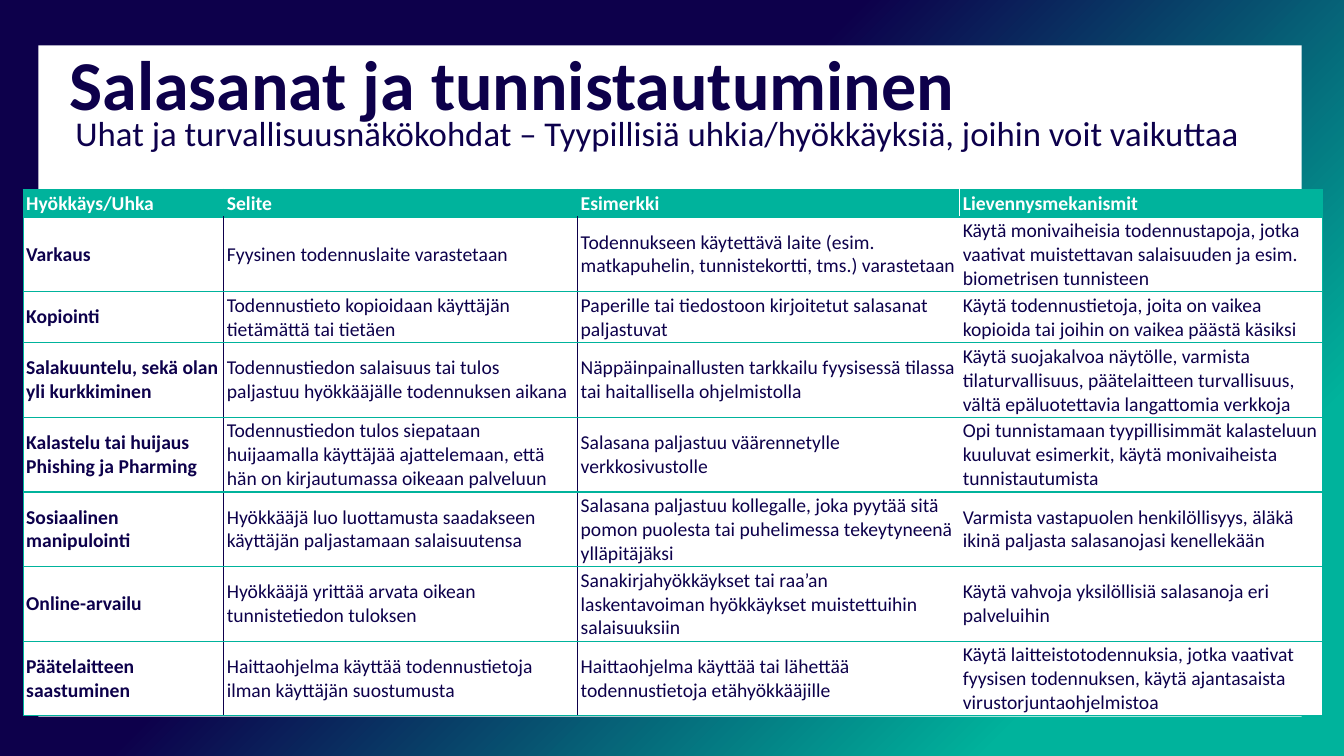
from lxml import etree
from pptx import Presentation
from pptx.dml.color import RGBColor
from pptx.enum.shapes import MSO_SHAPE
from pptx.enum.text import MSO_ANCHOR, MSO_AUTO_SIZE, PP_ALIGN
from pptx.oxml import parse_xml
from pptx.util import Inches, Pt

RECTANGLE = MSO_SHAPE.RECTANGLE
MIDDLE, TOP = MSO_ANCHOR.MIDDLE, MSO_ANCHOR.TOP
NO_AUTOFIT = MSO_AUTO_SIZE.NONE
LEFT = PP_ALIGN.LEFT
A = "http://schemas.openxmlformats.org/drawingml/2006/main"
NAVY, GREEN, WHITE = "0D004B", "00B39C", "FFFFFF"


def paint(color_format, color):
    color_format.rgb = RGBColor.from_string(color)


def write(tf, text, size, color, bold, anchor):
    tf.text = text
    tf.word_wrap = True
    tf.vertical_anchor = anchor
    p = tf.paragraphs[0]
    p.alignment = LEFT
    for r in p.runs:
        r.font.name = "Calibri"
        r.font.size = Pt(size)
        r.font.bold = bold
        paint(r.font.color, color)
    return p


prs = Presentation()
prs.slide_width, prs.slide_height = Inches(13.33), Inches(7.5)
slide = prs.slides.add_slide(prs.slide_layouts[5])

fill = slide.background.fill
fill.gradient()
fill.gradient_angle = 315
stops = fill._fill._gradFill.find(f"{{{A}}}gsLst")
for stop in list(stops):
    stops.remove(stop)
for share, color in [(0, NAVY), (41, NAVY), (83, GREEN), (99, GREEN)]:
    stop = etree.SubElement(stops, f"{{{A}}}gs", pos=str(share * 1000))
    etree.SubElement(stop, f"{{{A}}}srgbClr", val=color)

panel = slide.shapes.add_shape(RECTANGLE, Inches(0.38), Inches(0.45), Inches(12.53), Inches(6.66))
panel.shadow.inherit = False
panel.fill.solid()
paint(panel.fill.fore_color, WHITE)
panel.line.fill.background()

title = slide.shapes.title
title.left, title.top, title.width, title.height = (Inches(v) for v in (0.59, 0.42, 11.5, 0.9))
p = write(title.text_frame, "Salasanat ja tunnistautuminen", 50, NAVY, True, MIDDLE)
p.line_spacing = 0.9
title.text_frame.auto_size = NO_AUTOFIT
title._element.addprevious(panel._element)

subtitle = slide.shapes.add_textbox(Inches(0.65), Inches(1.17), Inches(11.88), Inches(0.71))
p = write(subtitle.text_frame,
          "Uhat ja turvallisuusnäkökohdat – Tyypillisiä uhkia/hyökkäyksiä, joihin voit vaikuttaa",
          24.8, "0D004C", False, TOP)
p.line_spacing = 0.7

rows = [
    ("Hyökkäys/Uhka", "Selite", "Esimerkki", "Lievennysmekanismit"),
    ("Varkaus",
     "Fyysinen todennuslaite varastetaan",
     "Todennukseen käytettävä laite (esim. matkapuhelin, tunnistekortti, tms.) varastetaan",
     "Käytä monivaiheisia todennustapoja, jotka vaativat muistettavan salaisuuden ja esim. biometrisen tunnisteen"),
    ("Kopiointi",
     "Todennustieto kopioidaan käyttäjän tietämättä tai tietäen",
     "Paperille tai tiedostoon kirjoitetut salasanat paljastuvat",
     "Käytä todennustietoja, joita on vaikea kopioida tai joihin on vaikea päästä käsiksi"),
    ("Salakuuntelu, sekä olan yli kurkkiminen",
     "Todennustiedon salaisuus tai tulos paljastuu hyökkääjälle todennuksen aikana",
     "Näppäinpainallusten tarkkailu fyysisessä tilassa tai haitallisella ohjelmistolla",
     "Käytä suojakalvoa näytölle, varmista tilaturvallisuus, päätelaitteen turvallisuus, "
     "vältä epäluotettavia langattomia verkkoja"),
    ("Kalastelu tai huijaus\vPhishing ja Pharming",
     "Todennustiedon tulos siepataan huijaamalla käyttäjää ajattelemaan, "
     "että hän on kirjautumassa oikeaan palveluun",
     "Salasana paljastuu väärennetylle verkkosivustolle",
     "Opi tunnistamaan tyypillisimmät kalasteluun kuuluvat esimerkit, käytä monivaiheista tunnistautumista"),
    ("Sosiaalinen manipulointi",
     "Hyökkääjä luo luottamusta saadakseen käyttäjän paljastamaan salaisuutensa",
     "Salasana paljastuu kollegalle, joka pyytää sitä pomon puolesta "
     "tai puhelimessa tekeytyneenä ylläpitäjäksi",
     "Varmista vastapuolen henkilöllisyys, äläkä ikinä paljasta salasanojasi kenellekään"),
    ("Online-arvailu",
     "Hyökkääjä yrittää arvata oikean tunnistetiedon tuloksen",
     "Sanakirjahyökkäykset tai raa’an laskentavoiman hyökkäykset muistettuihin salaisuuksiin",
     "Käytä vahvoja yksilöllisiä salasanoja eri palveluihin"),
    ("Päätelaitteen saastuminen",
     "Haittaohjelma käyttää todennustietoja ilman käyttäjän suostumusta",
     "Haittaohjelma käyttää tai lähettää todennustietoja etähyökkääjille",
     "Käytä laitteistotodennuksia, jotka vaativat fyysisen todennuksen, "
     "käytä ajantasaista virustorjuntaohjelmistoa"),
]
col_widths = [1.99, 3.51, 3.79, 3.6]
row_heights = [0.26, 0.74, 0.5] + [0.74] * 5
table = slide.shapes.add_table(len(rows), len(col_widths), Inches(0.23), Inches(1.88),
                               Inches(sum(col_widths)), Inches(sum(row_heights))).table
table.horz_banding = False
for column, width in zip(table.columns, col_widths):
    column.width = Inches(width)
for row, height in zip(table.rows, row_heights):
    row.height = Inches(height)

for i, texts in enumerate(rows):
    header = i == 0
    inner = GREEN if header else NAVY
    for j, text in enumerate(texts):
        cell = table.cell(i, j)
        cell.margin_left = cell.margin_right = Inches(0.03)
        cell.margin_top = cell.margin_bottom = Inches(0.02)
        write(cell.text_frame, text, 14, WHITE if header else NAVY, header or j == 0, None)
        cell.vertical_anchor = MIDDLE
        borders = {"lnL": (GREEN, inner, inner, None)[j],
                   "lnR": (inner, inner, None, GREEN)[j],
                   "lnT": GREEN, "lnB": GREEN}
        for side, color in borders.items():
            if color:
                cell._tc.get_or_add_tcPr().append(parse_xml(
                    f'<a:{side} xmlns:a="{A}" w="12700"><a:solidFill>'
                    f'<a:srgbClr val="{color}"/></a:solidFill></a:{side}>'))
        cell.fill.solid()
        paint(cell.fill.fore_color, GREEN if header else WHITE)

prs.save("out.pptx")
